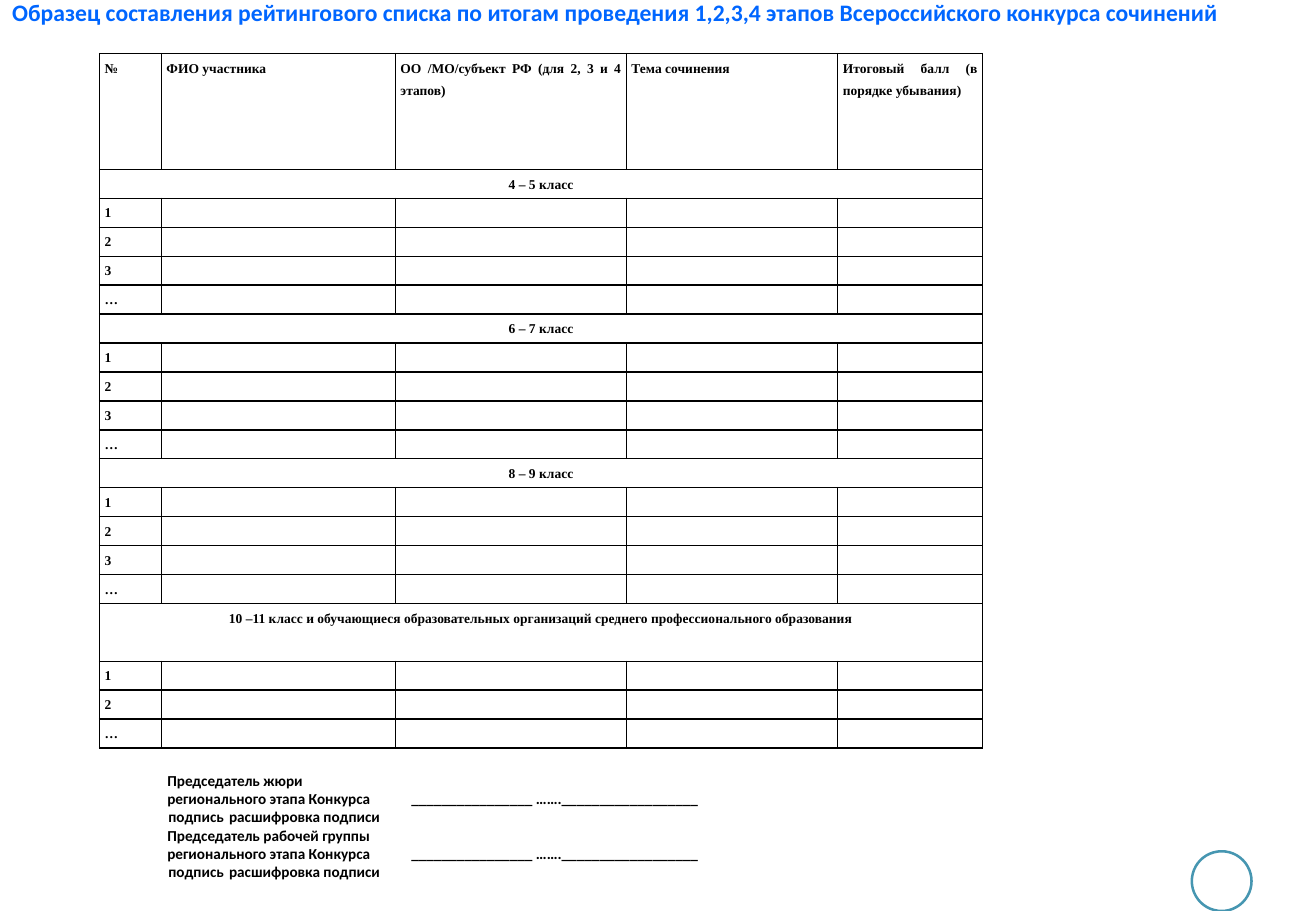
import pptx
import pptx.dml.color
import pptx.enum.shapes
import pptx.enum.text
import pptx.oxml
import pptx.oxml.ns
import pptx.util
from lxml import etree

Pt = pptx.util.Pt
ALIGN = pptx.enum.text.PP_ALIGN
ANCHOR = pptx.enum.text.MSO_ANCHOR
AUTO_SIZE = pptx.enum.text.MSO_AUTO_SIZE
ROW = 17.16
COLUMNS = [36.7, 138.7, 136.9, 125.3, 85.9]
HEADERS = ["№", "ФИО участника", "ОО /МО/субъект РФ (для 2, 3 и 4 этапов)",
           "Тема сочинения", "Итоговый балл (в порядке убывания)"]
GROUPS = [
    ("4 – 5 класс", ["1", "2", "3", "…"], 1),
    ("6 – 7 класс", ["1", "2", "3", "…"], 1),
    ("8 – 9 класс", ["1", "2", "3", "…"], 1),
    ("10 –11 класс и обучающиеся образовательных организаций "
     "среднего профессионального образования", ["1", "2", "…"], 2),
]
SIGNERS = [("Председатель жюри", 170), ("Председатель рабочей группы", 168)]


def color(value):
    """Return the colour for a hex string."""
    return pptx.dml.color.RGBColor.from_string(value)


def child(parent, tag, **attributes):
    """Append a DrawingML element and return it."""
    return etree.SubElement(parent, pptx.oxml.ns.qn(tag), attributes)


def write(para, text, size=9, font="Calibri", fill="000000", bold=True,
          align=ALIGN.JUSTIFY, spacing=1.0):
    """Write one formatted span into a paragraph."""
    para.alignment = align
    para.line_spacing = spacing
    if not text:
        child(para._p, "a:endParaRPr", sz=str(size * 100))
        return
    span = para.add_run()
    span.text = text
    span.font.size = Pt(size)
    span.font.name = font
    span.font.bold = bold
    span.font.color.rgb = color(fill)


def place_title(page, left, top, width, height):
    """Place the slide title in its placeholder."""
    box = page.shapes.title
    box.left, box.top, box.width, box.height = Pt(left), Pt(top), Pt(width), Pt(height)
    frame = box.text_frame
    frame.word_wrap = False
    frame.auto_size = AUTO_SIZE.NONE
    frame.vertical_anchor = ANCHOR.MIDDLE
    write(frame.paragraphs[0],
          "Образец составления рейтингового списка по итогам проведения "
          "1,2,3,4 этапов Всероссийского конкурса сочинений",
          size=14, fill="0066FF", align=ALIGN.LEFT)


def fill_cell(cell, text, align=ALIGN.JUSTIFY):
    """Write a bordered table cell without a fill."""
    cell.margin_left = cell.margin_right = Pt(3)
    cell.margin_top = cell.margin_bottom = Pt(0)
    properties = cell._tc.get_or_add_tcPr()
    for side in ("a:lnL", "a:lnR", "a:lnT", "a:lnB"):
        border = child(properties, side, w=str(Pt(1)))
        child(child(border, "a:solidFill"), "a:srgbClr", val="000000")
    cell.fill.background()
    write(cell.text_frame.paragraphs[0], text, size=8, font="Times New Roman",
          align=align, spacing=1.5)


def place_rating(page, left, top):
    """Place the rating table with its class groups."""
    rows = [(HEADERS, 4, False)]
    for name, numbers, units in GROUPS:
        rows.append(([name], units, True))
        rows += [([number], 1, False) for number in numbers]
    height = ROW * sum(units for _, units, _ in rows)
    table = page.shapes.add_table(len(rows), len(COLUMNS), Pt(left), Pt(top),
                                  Pt(sum(COLUMNS)), Pt(height)).table
    table.first_row = table.horz_banding = False
    for column, width in zip(table.columns, COLUMNS):
        column.width = Pt(width)
    for index, (texts, units, is_group) in enumerate(rows):
        table.rows[index].height = Pt(ROW * units)
        texts = texts + [""] * (len(COLUMNS) - len(texts))
        for position, text in enumerate(texts):
            fill_cell(table.cell(index, position), text,
                      align=ALIGN.CENTER if is_group else ALIGN.JUSTIFY)
        if is_group:
            table.cell(index, 0).merge(table.cell(index, len(COLUMNS) - 1))


def place_signatures(page, left, top, width, height):
    """Place the signature lines of both chairs."""
    frame = page.shapes.add_textbox(Pt(left), Pt(top), Pt(width), Pt(height)).text_frame
    frame.word_wrap = True
    frame.vertical_anchor = ANCHOR.MIDDLE
    lines = []
    for signer, stop in SIGNERS:
        lines += [
            (signer, []),
            ("регионального этапа Конкурса\t________________ …….__________________", [stop]),
            ("\tподпись\tрасшифровка подписи", [171.8, 276]),
        ]
    for index, (text, stops) in enumerate(lines):
        para = frame.add_paragraph() if index else frame.paragraphs[0]
        properties = para._p.get_or_add_pPr()
        properties.set("marL", "0")
        properties.set("indent", str(Pt(35.4)))
        write(para, text)
        if stops:
            tabs = child(properties, "a:tabLst")
            for stop in stops:
                child(tabs, "a:tab", pos=str(Pt(stop)), algn="l")


def place_circle(page, left, top, size):
    """Place the page circle in the corner."""
    circle = page.shapes.add_shape(pptx.enum.shapes.MSO_SHAPE.OVAL,
                                   Pt(left), Pt(top), Pt(size), Pt(size))
    circle.shadow.inherit = False
    circle.fill.solid()
    circle.fill.fore_color.rgb = color("FFFFFF")
    circle.line.color.rgb = color("4696B1")
    circle.line.width = Pt(1.5)


def main():
    """Build the deck and save it."""
    deck = pptx.Presentation()
    deck.slide_width, deck.slide_height = Pt(780), Pt(540)
    page = deck.slides.add_slide(deck.slide_layouts[5])
    place_circle(page, 706.4, 504.6, 35.4)
    place_rating(page, 59, 31.8)
    place_title(page, 0, -5, 733.7, 24.3)
    place_signatures(page, 56.7, 453, 576.7, 73)
    deck.save("out.pptx")


if __name__ == "__main__":
    main()
